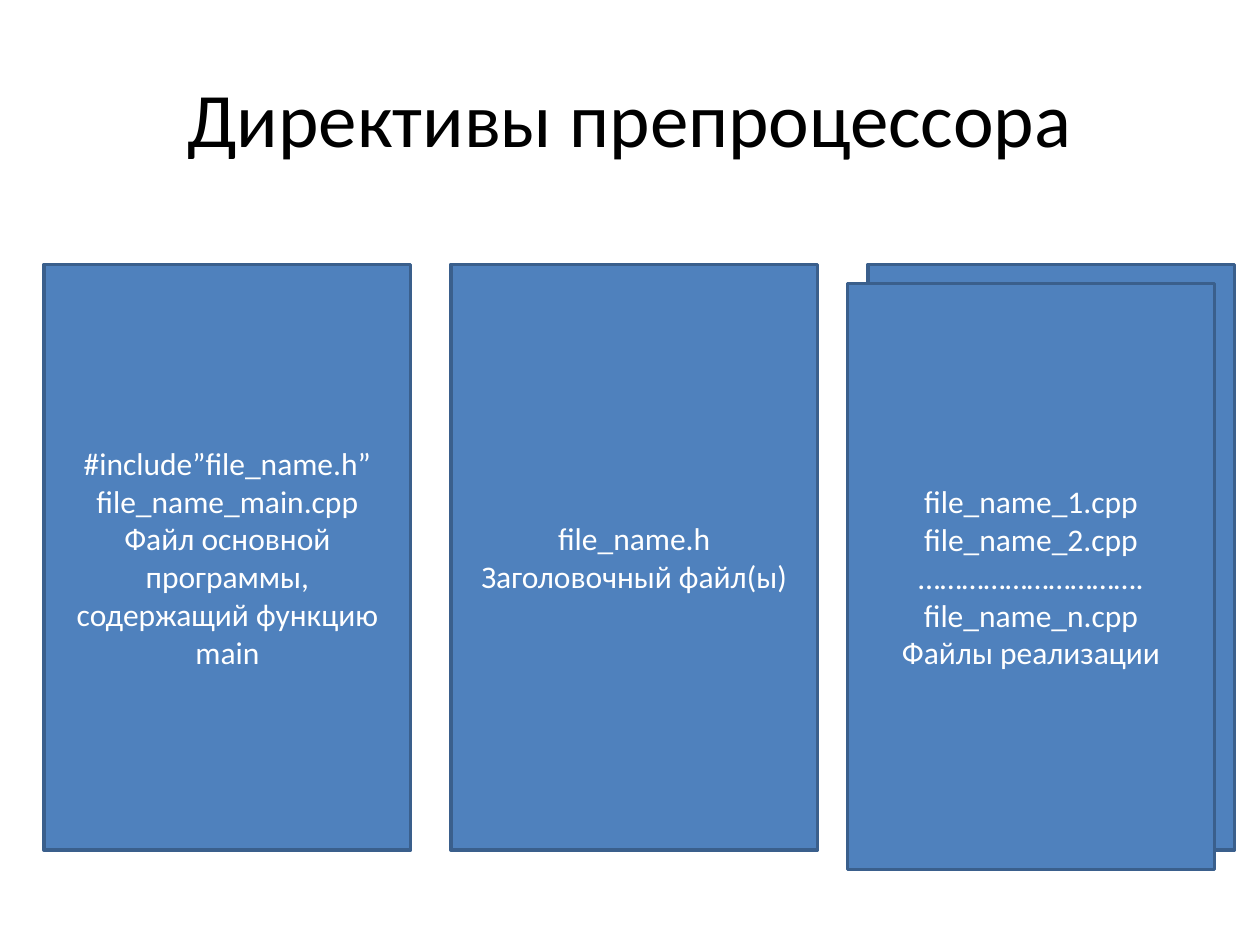
import pptx
import pptx.dml.color
import pptx.enum.shapes
import pptx.enum.text
import pptx.util

Cm, Pt = pptx.util.Cm, pptx.util.Pt

# Content: each card has a left edge, a shift down from the row and its lines
TITLE = "Директивы препроцессора"
CARDS = [
    (0.89, 0, ["#include”file_name.h”", "file_name_main.cpp",
               "Файл основной программы, содержащий функцию main"]),
    (17.5, 0, []),  # rear sheet of the implementation stack
    (17.09, 0.39, ["file_name_1.cpp", "file_name_2.cpp",
                   "………………………….", "file_name_n.cpp",
                   "Файлы реализации"]),
    (9.09, 0, ["file_name.h", "Заголовочный файл(ы)"]),
]
ROW_TOP, CARD_WIDTH, CARD_HEIGHT = 5.33, 7.39, 11.81
FONT = "Calibri"


def color(value):
    return pptx.dml.color.RGBColor.from_string(value)


def write_lines(box, lines, size, text_color):
    frame = box.text_frame
    frame.word_wrap = True
    frame.vertical_anchor = pptx.enum.text.MSO_ANCHOR.MIDDLE
    for index, line in enumerate(lines):
        para = frame.add_paragraph() if index else frame.paragraphs[0]
        para.alignment = pptx.enum.text.PP_ALIGN.CENTER
        span = para.add_run()
        span.text = line
        span.font.name = FONT
        span.font.size = Pt(size)
        span.font.color.rgb = color(text_color)


def add_card(page, left, shift, lines):
    card = page.shapes.add_shape(
        pptx.enum.shapes.MSO_SHAPE.RECTANGLE,
        Cm(left), Cm(ROW_TOP + shift), Cm(CARD_WIDTH), Cm(CARD_HEIGHT))
    card.shadow.inherit = False
    card.fill.solid()
    card.fill.fore_color.rgb = color("4F81BD")
    card.line.color.rgb = color("3A5F8C")
    card.line.width = Pt(2)
    write_lines(card, lines, 18, "FFFFFF")


def main():
    deck = pptx.Presentation()
    deck.slide_width, deck.slide_height = Cm(25.4), Cm(19.05)
    page = deck.slides.add_slide(deck.slide_layouts[6])

    # Title
    title = page.shapes.add_textbox(Cm(1.27), Cm(0.76), Cm(22.86), Cm(3.18))
    write_lines(title, [TITLE], 44, "000000")

    # File cards, from back to front
    for left, shift, lines in CARDS:
        add_card(page, left, shift, lines)

    deck.save("out.pptx")


if __name__ == "__main__":
    main()
